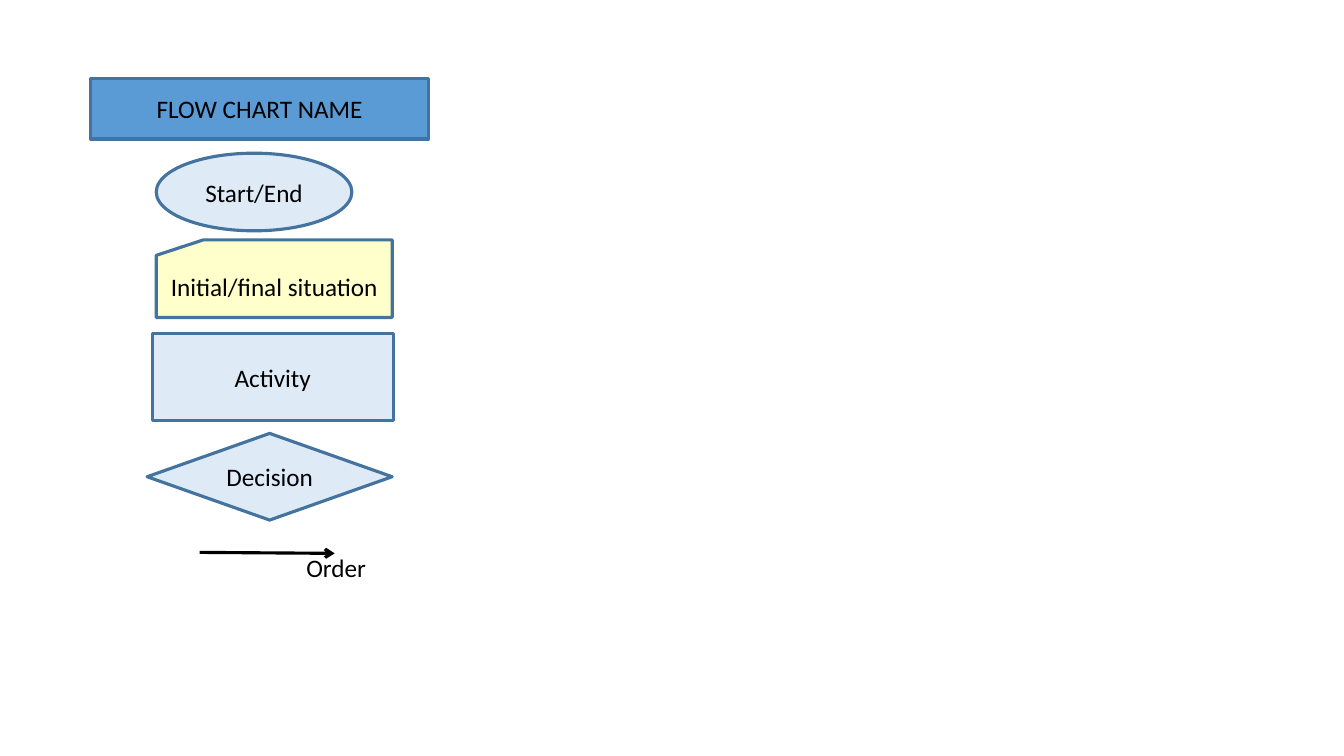
from dataclasses import dataclass

from lxml import etree
from pptx import Presentation
from pptx import util as u
from pptx.dml.color import RGBColor
from pptx.enum import shapes, text
from pptx.oxml.ns import qn

PALE_BLUE = "DEEBF7"
OUTLINE = "43739E"
BLACK = "000000"
LINE_WIDTH = u.Pt(2.25)


@dataclass(frozen=True)
class Symbol:
    label: str
    kind: shapes.MSO_SHAPE
    left: float
    top: float
    width: float
    height: float
    fill: str = PALE_BLUE


SYMBOLS = [
    Symbol("Start/End", shapes.MSO_SHAPE.OVAL, 1.55, 1.52, 1.94, 0.77),
    Symbol("Initial/final situation", shapes.MSO_SHAPE.FLOWCHART_CARD,
           1.55, 2.38, 2.34, 0.77, "FFFFCC"),
    Symbol("Activity", shapes.MSO_SHAPE.RECTANGLE, 1.51, 3.31, 2.39, 0.86),
    Symbol("Decision", shapes.MSO_SHAPE.DIAMOND, 1.46, 4.3, 2.43, 0.86),
]


def paint(target, color: str) -> None:
    target.solid()
    target.fore_color.rgb = RGBColor.from_string(color)


def write(frame, label: str, align: text.PP_ALIGN) -> None:
    frame.text = label
    paragraph = frame.paragraphs[0]
    paragraph.alignment = align
    font = paragraph.runs[0].font
    font.name = "Calibri"
    font.size = u.Pt(18)
    paint(font.fill, BLACK)


def style_box(box, label: str, fill: str) -> None:
    paint(box.fill, fill)
    paint(box.line.fill, OUTLINE)
    box.line.width = LINE_WIDTH
    frame = box.text_frame
    frame.word_wrap = True
    frame.auto_size = text.MSO_AUTO_SIZE.NONE
    frame.vertical_anchor = text.MSO_ANCHOR.MIDDLE
    write(frame, label, text.PP_ALIGN.CENTER)


def add_heading(slide) -> None:
    heading = slide.shapes.title
    heading.left, heading.top = u.Inches(0.9), u.Inches(0.78)
    heading.width, heading.height = u.Inches(3.35), u.Inches(0.6)
    style_box(heading, "FLOW CHART NAME", "5B9BD5")


def add_symbol(slide, symbol: Symbol) -> None:
    box = slide.shapes.add_shape(
        symbol.kind, u.Inches(symbol.left), u.Inches(symbol.top),
        u.Inches(symbol.width), u.Inches(symbol.height))
    box.shadow.inherit = False
    style_box(box, symbol.label, symbol.fill)


def add_order(slide) -> None:
    arrow = slide.shapes.add_connector(
        shapes.MSO_CONNECTOR.STRAIGHT,
        u.Inches(1.98), u.Inches(5.48), u.Inches(3.32), u.Inches(5.49))
    paint(arrow.line.fill, BLACK)
    arrow.line.width = LINE_WIDTH
    properties = arrow.line._get_or_add_ln()
    etree.SubElement(properties, qn("a:tailEnd"), type="arrow")
    etree.SubElement(properties.getparent(), qn("a:effectLst"))

    caption = slide.shapes.add_textbox(
        u.Inches(2.94), u.Inches(5.43), u.Inches(0.8), u.Inches(0.4))
    caption.text_frame.word_wrap = False
    caption.text_frame.auto_size = text.MSO_AUTO_SIZE.SHAPE_TO_FIT_TEXT
    write(caption.text_frame, "Order", text.PP_ALIGN.LEFT)


def main() -> None:
    deck = Presentation()
    deck.slide_width, deck.slide_height = u.Inches(13.33), u.Inches(7.5)
    slide = deck.slides.add_slide(deck.slide_layouts[5])
    add_heading(slide)
    for symbol in SYMBOLS:
        add_symbol(slide, symbol)
    add_order(slide)
    deck.save("out.pptx")


if __name__ == "__main__":
    main()
